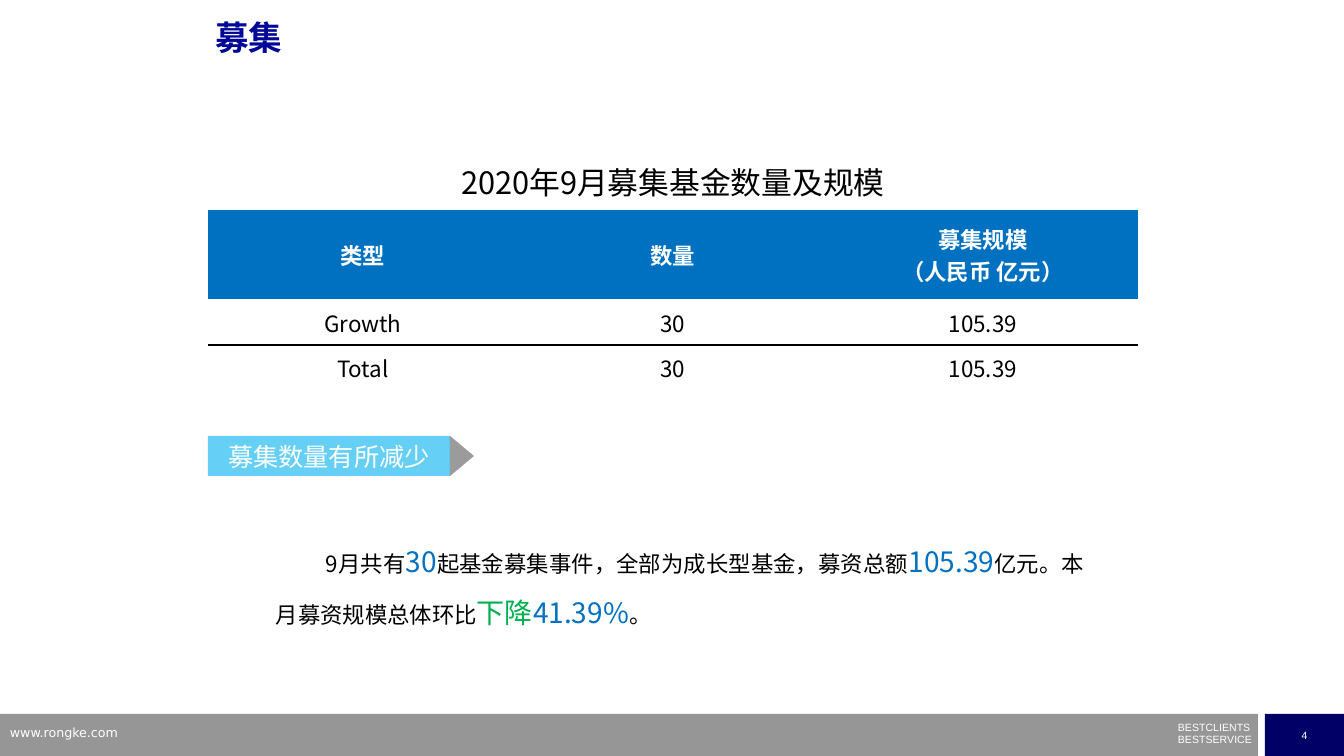
from dataclasses import dataclass

from lxml import etree
from pptx import Presentation
from pptx.dml.color import RGBColor
from pptx.enum.shapes import MSO_SHAPE
from pptx.enum.text import MSO_ANCHOR, PP_ALIGN
from pptx.oxml.ns import qn
from pptx.util import Emu, Pt

RECTANGLE, TRIANGLE = MSO_SHAPE.RECTANGLE, MSO_SHAPE.ISOSCELES_TRIANGLE
TOP, MIDDLE = MSO_ANCHOR.TOP, MSO_ANCHOR.MIDDLE
LEFT, CENTER, JUSTIFY = PP_ALIGN.LEFT, PP_ALIGN.CENTER, PP_ALIGN.JUSTIFY
EMU_PER_PX = 914400 / 100.8
PLAIN_TABLE = "{2D5ABB26-0587-4C30-8999-92F81FD0307C}"


@dataclass(frozen=True)
class Theme:
    """Colours, fonts and type sizes of the deck."""
    white: str = "FFFFFF"
    black: str = "000000"
    title: str = "000798"
    blue: str = "0070C0"
    green: str = "00B050"
    tag: str = "00B0F0"
    tip: str = "595959"
    bar: str = "969696"
    navy: str = "000066"
    cjk: str = "Noto Sans CJK SC"
    latin: str = "Arial"
    web: str = "DejaVu Sans"
    title_size: float = 24
    caption_size: float = 22
    figure_size: float = 20
    tag_size: float = 18
    text_size: float = 16
    web_size: float = 9
    small_size: float = 7.5


THEME = Theme()
CAPTION = "2020年9月募集基金数量及规模"
ROWS = [
    ("类型", "数量", "募集规模\v（人民币 亿元）"),
    ("Growth", "30", "105.39"),
    ("Total", "30", "105.39"),
]
ROW_HEIGHTS = [59, 89, 46, 44]
COLUMN_WIDTH = 310
SUMMARY = [
    ("9月共有", THEME.text_size, THEME.black),
    ("30", THEME.figure_size, THEME.blue),
    ("起基金募集事件，全部为成长型基金，募资总额", THEME.text_size, THEME.black),
    ("105.39", THEME.figure_size, THEME.blue),
    ("亿元。本月募资规模总体环比", THEME.text_size, THEME.black),
    ("下降", THEME.figure_size, THEME.green),
    ("41.39%", THEME.figure_size, THEME.blue),
    ("。", THEME.text_size, THEME.black),
]


def px(length):
    """Turn pixels into EMU."""
    return Emu(round(length * EMU_PER_PX))


def place(shape, left, top, width, height):
    """Move and size a shape."""
    shape.left, shape.top = px(left), px(top)
    shape.width, shape.height = px(width), px(height)


def style_paragraph(para, size, color, name=THEME.cjk, bold=False, align=LEFT):
    """Set the font and alignment of a whole paragraph."""
    para.alignment = align
    font = para.font
    font.name, font.size, font.bold = name, Pt(size), bold
    font.color.rgb = RGBColor.from_string(color)
    properties = para._p.pPr.find(qn("a:defRPr"))
    etree.SubElement(properties, qn("a:ea"), typeface=THEME.cjk)


def add_block(shapes, kind, bounds, color, opacity=100):
    """Add a filled preset shape without outline."""
    block = shapes.add_shape(kind, *map(px, bounds))
    block.shadow.inherit = False
    block.fill.solid()
    block.fill.fore_color.rgb = RGBColor.from_string(color)
    block.line.fill.background()
    if opacity < 100:
        tint = block.fill._xPr.find(qn("a:solidFill"))[0]
        etree.SubElement(tint, qn("a:alpha"), val=str(opacity * 1000))
    return block


def label(block, text, size, name=THEME.cjk):
    """Write white centred text in a block."""
    block.text_frame.vertical_anchor = MIDDLE
    para = block.text_frame.paragraphs[0]
    para.text = text
    style_paragraph(para, size, THEME.white, name, align=CENTER)


def add_text_box(page, bounds):
    """Add a wrapping text box and return its frame."""
    frame = page.shapes.add_textbox(*map(px, bounds)).text_frame
    frame.word_wrap = True
    return frame


def add_title(page):
    """Fill the title placeholder."""
    title = page.shapes.title
    place(title, 205, 16, 907, 71)
    title.text_frame.vertical_anchor = TOP
    para = title.text_frame.paragraphs[0]
    para.text = "募集"
    para.line_spacing = 0.9
    style_paragraph(para, THEME.title_size, THEME.title, THEME.latin, True)


def fill_cell(cell, text, size, color, bold=False, fill=None):
    """Write and colour one table cell."""
    cell.vertical_anchor = MIDDLE
    cell.margin_left = cell.margin_right = cell.margin_top = px(1)
    cell.margin_bottom = 0
    para = cell.text_frame.paragraphs[0]
    para.text = text
    style_paragraph(para, size, color, bold=bold, align=CENTER)
    if fill:
        cell.fill.solid()
        cell.fill.fore_color.rgb = RGBColor.from_string(fill)
    else:
        cell.fill.background()


def add_border(cell, side):
    """Draw a thin black line on one side of a cell."""
    line = etree.Element(qn(f"a:{side}"), w=str(Pt(1)))
    solid = etree.SubElement(line, qn("a:solidFill"))
    etree.SubElement(solid, qn("a:srgbClr"), val=THEME.black)
    cell._tc.get_or_add_tcPr().insert(0, line)


def add_fund_table(page):
    """Add the table of fund counts and sizes."""
    columns = len(ROWS[0])
    bounds = 208, 151, COLUMN_WIDTH * columns, sum(ROW_HEIGHTS)
    frame = page.shapes.add_table(len(ROW_HEIGHTS), columns, *map(px, bounds))
    table = frame.table
    table._tbl.tblPr.find(qn("a:tableStyleId")).text = PLAIN_TABLE
    table.horz_banding = False
    for row, height in zip(table.rows, ROW_HEIGHTS):
        row.height = px(height)
    table.cell(0, 0).merge(table.cell(0, columns - 1))
    fill_cell(table.cell(0, 0), CAPTION, THEME.caption_size, THEME.black)
    for row, texts in enumerate(ROWS, 1):
        for column, text in enumerate(texts):
            cell = table.cell(row, column)
            if row == 1:
                fill_cell(cell, text, THEME.text_size, THEME.white, True, THEME.blue)
            else:
                fill_cell(cell, text, THEME.text_size, THEME.black)
                add_border(cell, "lnB" if row == 2 else "lnT")


def add_tag(page):
    """Add the arrow-shaped heading above the summary."""
    group = page.shapes.add_group_shape()
    tag = add_block(group.shapes, RECTANGLE, (208, 436, 242, 40), THEME.tag, 60)
    label(tag, "募集数量有所减少", THEME.tag_size)
    tip = add_block(group.shapes, TRIANGLE, (442, 444, 40, 24), THEME.tip, 60)
    tip.rotation = 90


def add_summary(page):
    """Add the summary with its highlighted figures."""
    para = add_text_box(page, (266, 523, 828, 106)).paragraphs[0]
    para._p.get_or_add_pPr().set("indent", str(px(50)))
    para.line_spacing = 1.5
    for text, size, color in SUMMARY:
        span = para.add_run()
        span.text = text
        span.font.size = Pt(size)
        span.font.color.rgb = RGBColor.from_string(color)
    style_paragraph(para, THEME.text_size, THEME.black, align=JUSTIFY)


def add_footer(page):
    """Add the footer bar, address, slogan and page number."""
    add_block(page.shapes, RECTANGLE, (0, 714, 1258, 42), THEME.bar)
    number = add_block(page.shapes, RECTANGLE, (1265, 714, 79, 42), THEME.navy)
    label(number, "4", THEME.small_size, THEME.latin)
    slogan = add_text_box(page, (1178, 722, 77, 24))
    slogan.margin_left = slogan.margin_right = 0
    slogan.margin_top = slogan.margin_bottom = 0
    slogan.text = "BESTCLIENTS\nBESTSERVICE"
    for para in slogan.paragraphs:
        para.line_spacing = Pt(8.5)
        style_paragraph(para, THEME.small_size, THEME.white, THEME.latin)
    address = add_text_box(page, (0, 720, 323, 26)).paragraphs[0]
    address.text = "www.rongke.com"
    style_paragraph(address, THEME.web_size, THEME.white, THEME.web)


def main():
    """Build and save the deck."""
    deck = Presentation()
    deck.slide_width, deck.slide_height = px(1344), px(756)
    page = deck.slides.add_slide(deck.slide_layouts[5])
    add_footer(page)
    add_summary(page)
    add_title(page)
    add_tag(page)
    add_fund_table(page)
    deck.save("out.pptx")


if __name__ == "__main__":
    main()
